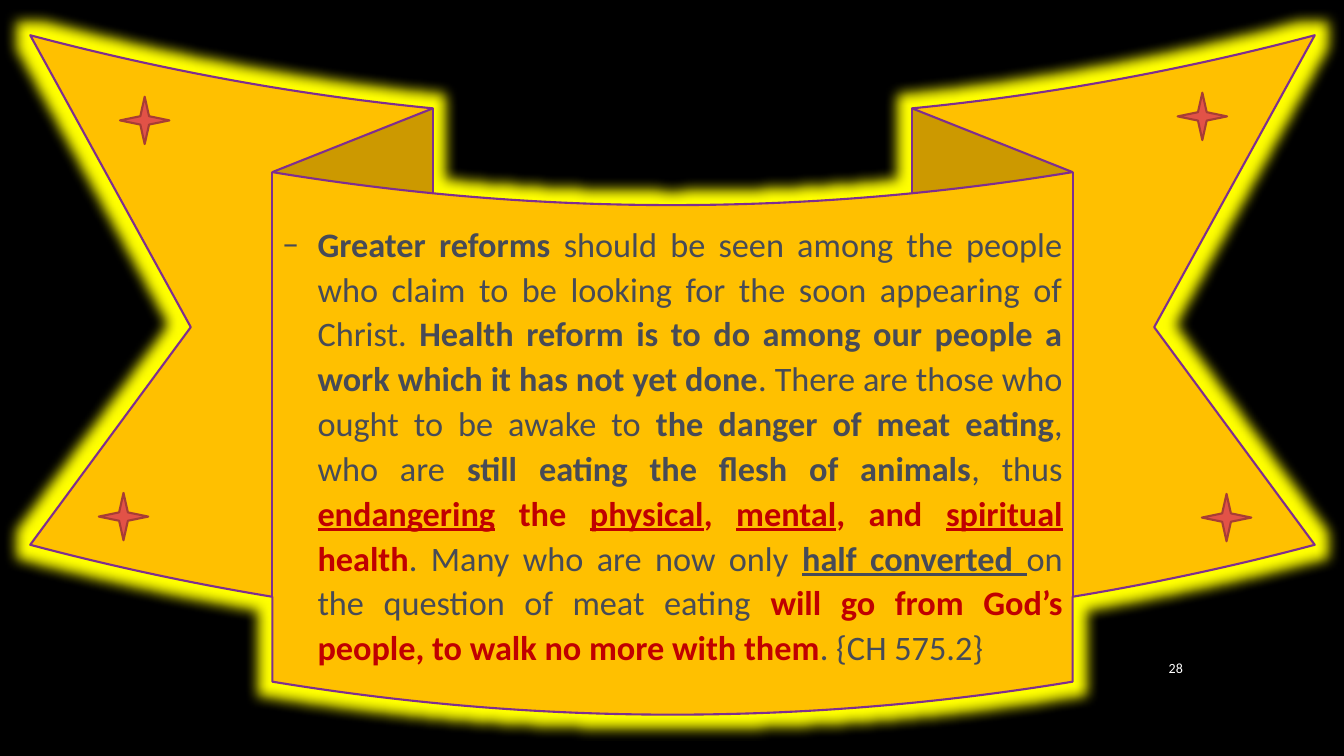
"""Builds a slide with a glowing ribbon, four stars and a quotation."""
import pptx
import pptx.util
import pptx.dml.color
import pptx.enum.shapes
import pptx.enum.text
import pptx.oxml
import pptx.oxml.ns

Inches = pptx.util.Inches
Pt = pptx.util.Pt
Kind = pptx.enum.shapes.MSO_SHAPE
Align = pptx.enum.text.PP_ALIGN
Middle = pptx.enum.text.MSO_ANCHOR.MIDDLE
NS = pptx.oxml.ns.nsdecls("a")

COLORS = {
    "black": "000000", "gold": "FFC000", "purple": "7F2E8F",
    "glow": "FFFF00", "star": "E25247", "edge": "A73D35",
    "gray": "474B57", "red": "C00000", "white": "FFFFFF",
}


def rgb(name):
    return pptx.dml.color.RGBColor.from_string(COLORS[name])


def draw(kind, box, fill, line):
    shape = slide.shapes.add_shape(kind, *map(Inches, box))
    shape.shadow.inherit = False
    shape.fill.solid()
    shape.fill.fore_color.rgb = rgb(fill)
    shape.line.color.rgb = rgb(line)
    shape.line.width = Pt(1.5)
    return shape


deck = pptx.Presentation()
deck.slide_width = Inches(13.33)
deck.slide_height = Inches(7.5)
slide = deck.slides.add_slide(deck.slide_layouts[6])
slide.background.fill.solid()
slide.background.fill.fore_color.rgb = rgb("black")

ribbon = draw(Kind.CURVED_DOWN_RIBBON, (0.3, 0.35, 12.74, 6.74), "gold", "purple")
for i, value in enumerate((0.25, 0.623, 0.125)):
    ribbon.adjustments[i] = value
effects = ribbon._element.spPr.find(pptx.oxml.ns.qn("a:effectLst"))
effects.append(pptx.oxml.parse_xml(
    f'<a:glow {NS} rad="{Pt(18)}"><a:srgbClr val="{COLORS["glow"]}"/></a:glow>'))

frame = ribbon.text_frame
frame.word_wrap = True
frame.vertical_anchor = Middle
quote = frame.paragraphs[0]
quote.alignment = Align.JUSTIFY
quote.line_spacing = 1.09
quote.space_before = Pt(9.3)
props = quote._p.get_or_add_pPr()
props.set("marL", str(Inches(0.35)))
props.set("indent", str(Inches(-0.35)))
props.append(pptx.oxml.parse_xml(f'<a:buFont {NS} typeface="Calibri"/>'))
props.append(pptx.oxml.parse_xml(f'<a:buChar {NS} char="–"/>'))

RUNS = [
    ("Greater reforms ", "gray", "b"),
    ("should be seen among the people who claim to be looking for "
     "the soon appearing of Christ. ", "gray", ""),
    ("Health reform is to do among our people a work which it has "
     "not yet done", "gray", "b"),
    (". There are those who ought to be awake to ", "gray", ""),
    ("the danger of meat eating", "gray", "b"),
    (", who are ", "gray", ""),
    ("still eating the flesh of animals", "gray", "b"),
    (", thus ", "gray", ""),
    ("endangering", "red", "bu"),
    (" the ", "red", "b"),
    ("physical", "red", "bu"),
    (", ", "red", "b"),
    ("mental", "red", "bu"),
    (", and ", "red", "b"),
    ("spiritual", "red", "bu"),
    (" health", "red", "b"),
    (". Many who are now only ", "gray", ""),
    ("half converted ", "gray", "bu"),
    ("on the question of meat eating ", "gray", ""),
    ("will go from God’s people, to walk no more with them", "red", "b"),
    (". {CH 575.2}", "gray", ""),
]
for text, color, style in RUNS:
    run = quote.add_run()
    run.text = text
    run.font.name = "Calibri"
    run.font.size = Pt(24.5)
    run.font.color.rgb = rgb(color)
    run.font.bold = "b" in style
    run.font.underline = "u" in style

for left, top in ((1.19, 0.96), (0.98, 4.89), (11.68, 0.92), (11.92, 4.9)):
    star = draw(Kind.STAR_4_POINT, (left, top, 0.49, 0.47), "star", "edge")
    star.adjustments[0] = 0.125

box = slide.shapes.add_textbox(Inches(11.23), Inches(6.42), Inches(0.6), Inches(0.41))
box.text_frame.word_wrap = True
box.text_frame.vertical_anchor = Middle
page = box.text_frame.paragraphs[0]
page.alignment = Align.RIGHT
run = page.add_run()
run.text = "28"
run.font.name = "Calibri"
run.font.size = Pt(10)
run.font.color.rgb = rgb("white")

deck.save("out.pptx")
